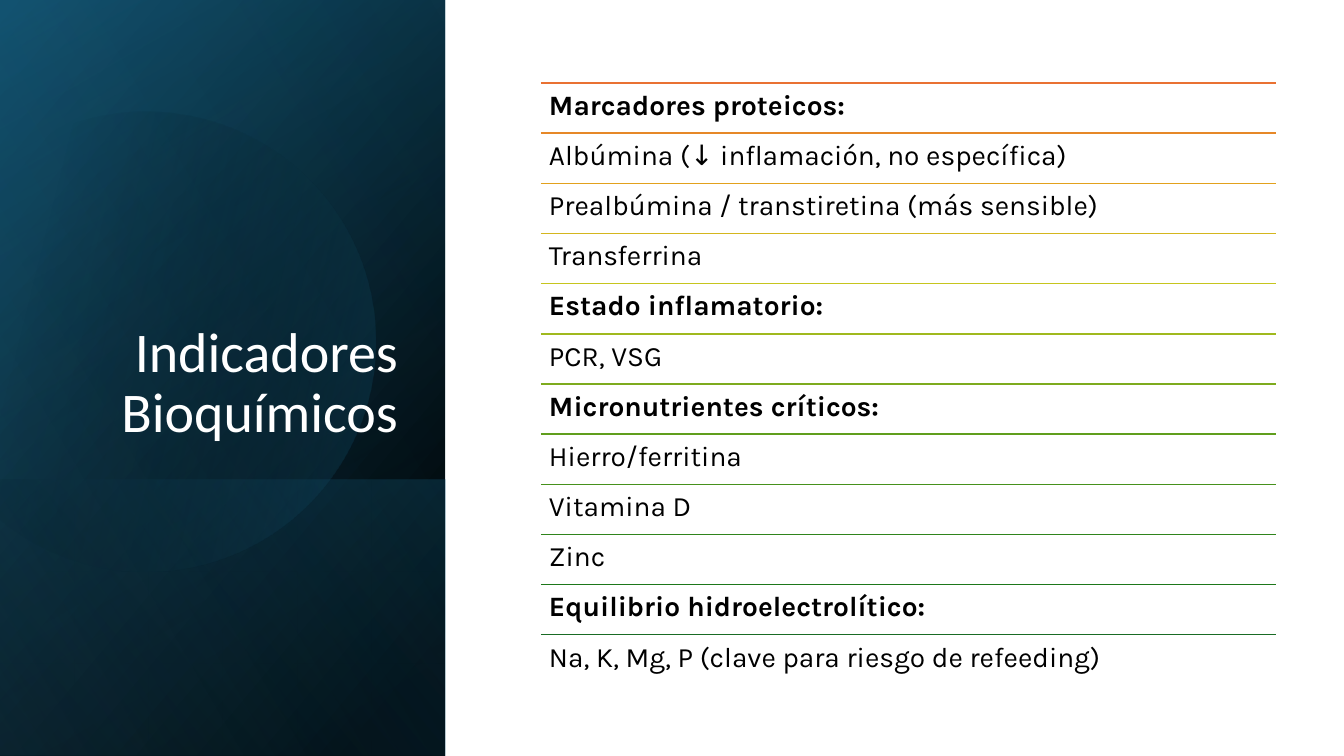
from math import cos, radians, sin

from lxml.etree import SubElement
from pptx import Presentation
from pptx.dml.color import RGBColor
from pptx.enum.shapes import MSO_CONNECTOR, MSO_SHAPE
from pptx.enum.text import MSO_ANCHOR, MSO_AUTO_SIZE, PP_ALIGN
from pptx.oxml.ns import qn
from pptx.util import Pt

SLIDE_W, SLIDE_H = 1344, 756
PANEL_W = 445

# (text, is heading, colour of the rule above)
INDICATORS = [
    ("Marcadores proteicos:", True, "E97132"),
    ("Albúmina (↓ inflamación, no específica)", False, "E68828"),
    ("Prealbúmina / transtiretina (más sensible)", False, "E2A11D"),
    ("Transferrina", False, "D4B61E"),
    ("Estado inflamatorio:", True, "C6C51E"),
    ("PCR, VSG", False, "A0B91E"),
    ("Micronutrientes críticos:", True, "7EAB1E"),
    ("Hierro/ferritina", False, "609E1D"),
    ("Vitamina D", False, "46911C"),
    ("Zinc", False, "2F841C"),
    ("Equilibrio hidroelectrolítico:", True, "1D771A"),
    ("Na, K, Mg, P (clave para riesgo de refeeding)", False, "196B24"),
]


def px(n):
    return round(n * 914400 / 100.8)


def rgb(color):
    return RGBColor.from_string(color)


def fill_gradient(sp, stops, angle):
    """Fill with (position %, colour, opacity %) stops; angle is clockwise."""
    sp.shadow.inherit = False
    sp.line.fill.background()
    sp.fill.gradient()
    sp.fill.gradient_angle = 360 - angle
    gs_list = sp.element.spPr.find(".//" + qn("a:gsLst"))
    for old in list(gs_list):
        gs_list.remove(old)
    for pos, color, opacity in stops:
        gs = SubElement(gs_list, qn("a:gs"), pos=str(pos * 1000))
        clr = SubElement(gs, qn("a:srgbClr"), val=color)
        if opacity < 100:
            SubElement(clr, qn("a:alpha"), val=str(opacity * 1000))


def add_turned_rect(s, box, stops, angle):
    """Cover box with a mirrored rectangle turned by 90 degrees."""
    x, y, w, h = box
    sp = s.shapes.add_shape(MSO_SHAPE.RECTANGLE, px(x + (w - h) / 2),
                            px(y + (h - w) / 2), px(h), px(w))
    sp.rotation = 90
    sp.element.spPr.find(qn("a:xfrm")).set("flipH", "1")
    fill_gradient(sp, stops, angle)


def add_cut_circle(s, cx, cy, radius, stops, angle):
    """Circle cut by a chord at its left, tilted with its gradient."""
    start, end = -118, 150
    points = [(px(cx + radius * cos(radians(a))), px(cy + radius * sin(radians(a))))
              for a in (start, -90, 0, 90, end)]
    builder = s.shapes.build_freeform(*points[0])
    builder.add_line_segments(points[1:], close=True)
    sp = builder.convert_to_shape()
    # One arc takes the place of the straight segments.
    outline = sp.element.spPr.find(".//" + qn("a:path"))
    for segment in list(outline)[1:]:
        outline.remove(segment)
    SubElement(outline, qn("a:arcTo"), wR=str(px(radius)), hR=str(px(radius)),
               stAng=str((start + 360) * 60000), swAng=str((end - start) * 60000))
    SubElement(outline, qn("a:close"))
    sp.rotation = 343.9
    fill_gradient(sp, stops, angle)


def add_panel(s, box):
    x, y, w, h = box
    add_turned_rect(s, box, [(8, "000000", 100), (100, "104862", 100)], 50)
    add_turned_rect(s, box, [(0, "000000", 0), (99, "156082", 46)], 30)
    add_turned_rect(s, (x, y + 480, w, h - 480),
                    [(2, "156082", 29), (100, "000000", 30)], 130)
    add_cut_circle(s, x + 145, y + 337, 230,
                   [(29, "000000", 0), (100, "156082", 43)], 30)
    add_turned_rect(s, box, [(0, "000000", 0), (99, "46B1E1", 11)], 120)


def format_text(tf, size, font, color, bold=False):
    tf.word_wrap = True
    tf.auto_size = MSO_AUTO_SIZE.NONE
    p = tf.paragraphs[0]
    p.line_spacing = 0.9
    r = p.runs[0]
    r.font.size = Pt(size)
    r.font.name = font
    r.font.bold = bold
    r.font.color.rgb = rgb(color)


def add_title(s, box, text):
    title = s.shapes.title
    title.left, title.top, title.width, title.height = map(px, box)
    tf = title.text_frame
    tf.text = text
    tf.vertical_anchor = MSO_ANCHOR.BOTTOM
    tf.paragraphs[0].alignment = PP_ALIGN.RIGHT
    format_text(tf, 40, "Calibri", "FFFFFF")
    title.element.getparent().append(title.element)  # bring above the panel


def add_rule(shapes, x, y, w, color):
    line = shapes.add_connector(MSO_CONNECTOR.STRAIGHT, px(x), px(y), px(x + w), px(y))
    line.line.color.rgb = rgb(color)
    line.line.width = Pt(1)
    SubElement(line.element.spPr, qn("a:effectLst"))


def add_indicator_list(s, box, indicators):
    x, y, w, h = box
    row_h = h / len(indicators)
    shapes = s.shapes.add_group_shape().shapes
    for i, (text, heading, color) in enumerate(indicators):
        row_y = y + i * row_h
        add_rule(shapes, x, row_y, w, color)
        tf = shapes.add_textbox(px(x), px(row_y), px(w), px(row_h)).text_frame
        tf.margin_left = tf.margin_top = tf.margin_right = tf.margin_bottom = px(8)
        tf.text = text
        format_text(tf, 20, "Karla", "000000", heading)


def main():
    prs = Presentation()
    prs.slide_width, prs.slide_height = px(SLIDE_W), px(SLIDE_H)
    s = prs.slides.add_slide(prs.slide_layouts[5])
    s.background.fill.solid()
    s.background.fill.fore_color.rgb = rgb("FFFFFF")
    add_panel(s, (0, 0, PANEL_W, SLIDE_H))
    add_title(s, (64, 186, 344, 264), "Indicadores Bioquímicos")
    add_indicator_list(s, (541, 83, 735, 602), INDICATORS)
    prs.save("out.pptx")


if __name__ == "__main__":
    main()
